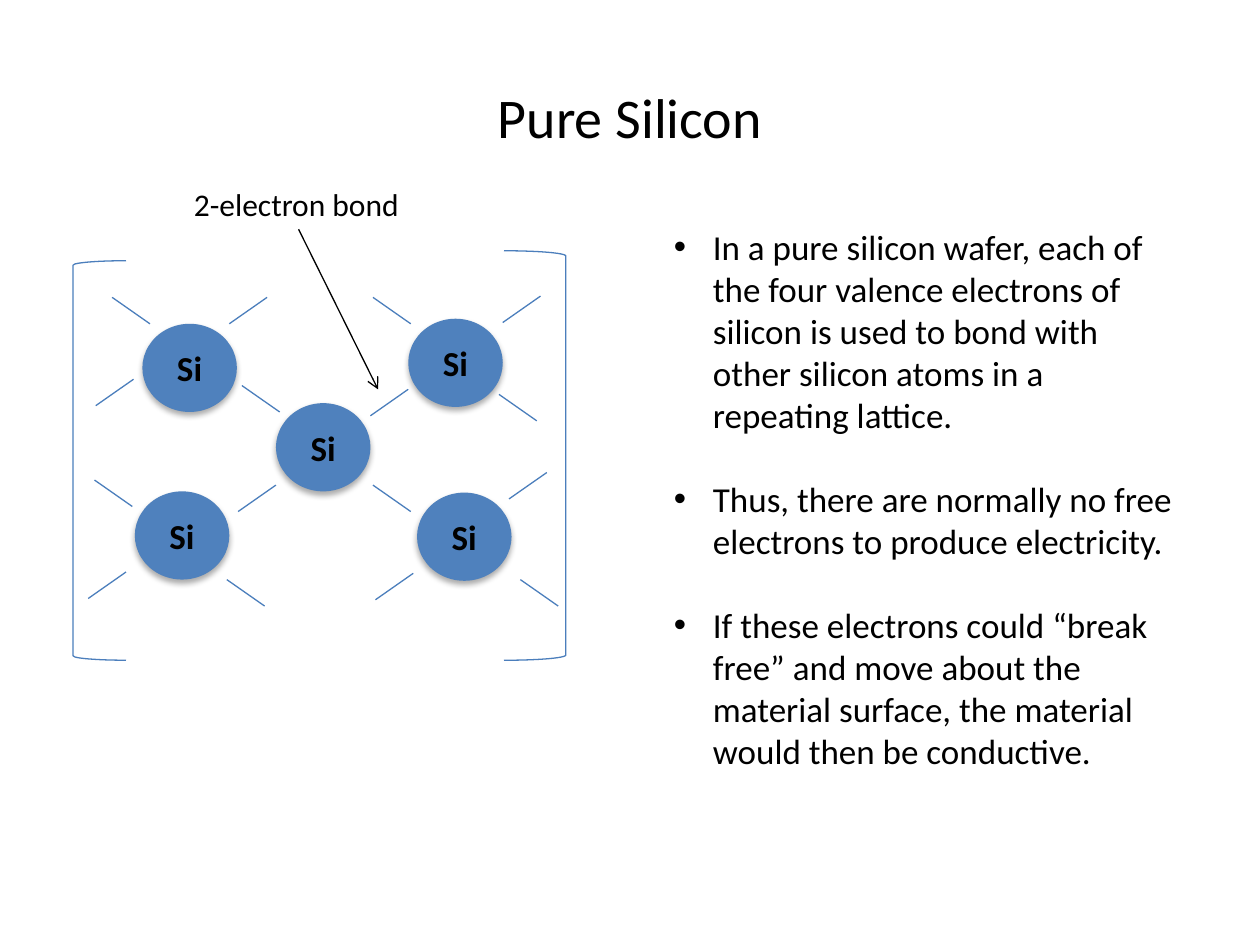
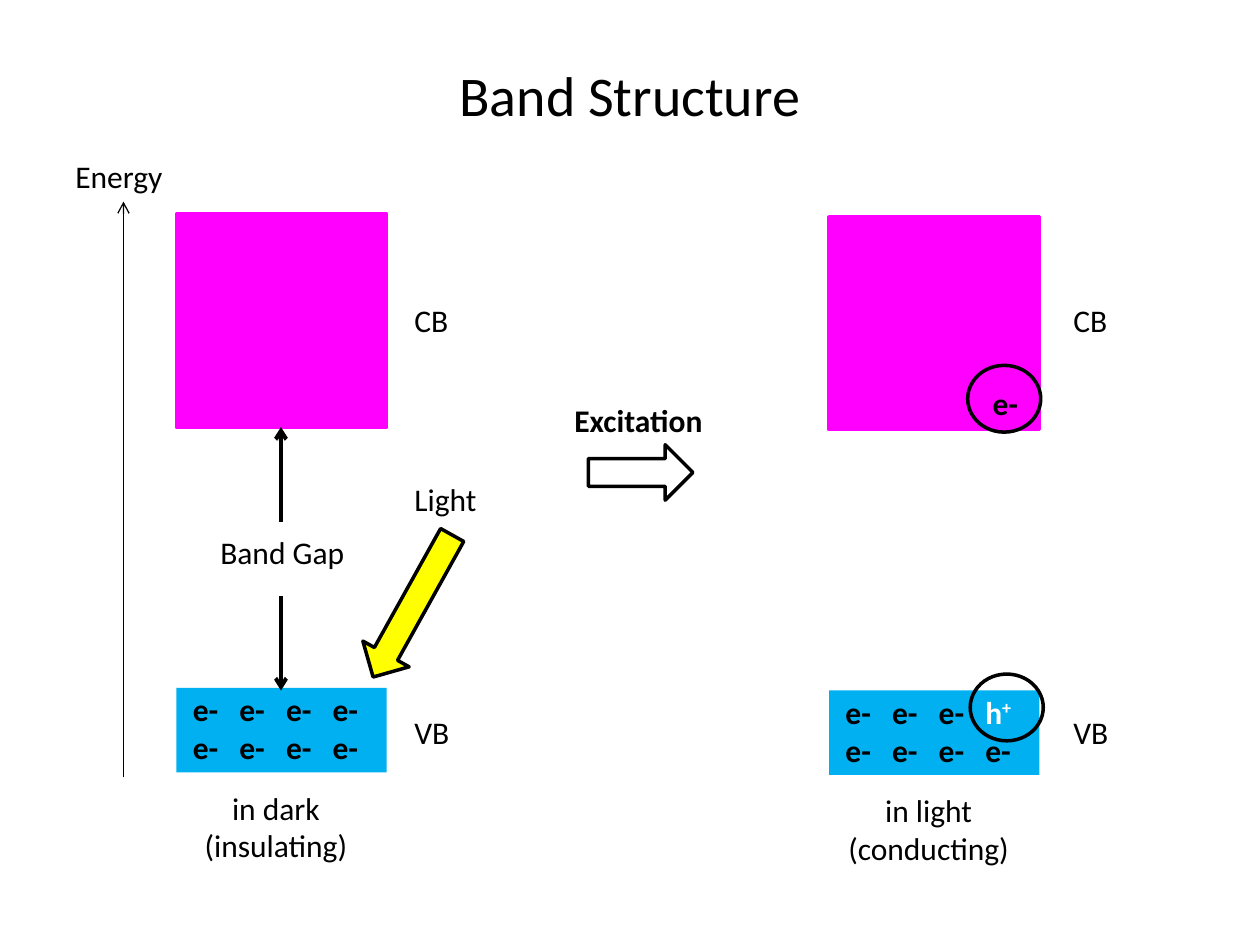
"""Build two slides on silicon bonding and semiconductor band structure."""
import pptx
import pptx.dml.color
import pptx.enum.shapes
import pptx.enum.text
import pptx.oxml
import pptx.oxml.ns
import pptx.util
from lxml import etree

Inches, Pt = pptx.util.Inches, pptx.util.Pt
MSO = pptx.enum.shapes.MSO_SHAPE
ALIGN = pptx.enum.text.PP_ALIGN
ANCHOR = pptx.enum.text.MSO_ANCHOR
qn = pptx.oxml.ns.qn

COLORS = {"black": "000000", "white": "FFFFFF", "atom": "4F81BD", "bond": "4B7EBC",
          "valence": "00B0F0", "conduction": "FF00FF", "light": "FFFF00"}
FONT = "Calibri"

ATOM_W, ATOM_H = 0.75, 0.7
ATOMS = [(2.19, 3.2), (3.24, 2.53), (3.31, 3.91), (1.13, 2.57), (1.07, 3.9)]
BOND_W, BOND_H = 0.3, 0.21
RISING_BONDS = [(2.94, 3.09), (1.89, 3.85), (0.76, 3.01), (1.82, 2.36), (3.99, 2.35),
                (0.7, 4.54), (2.98, 4.55), (4.04, 3.75)]
FALLING_BONDS = [(1.92, 3.06), (2.96, 3.85), (0.75, 3.81), (3.96, 3.13), (2.96, 2.36),
                 (0.89, 2.36), (1.8, 4.6), (4.13, 4.6)]
BRACKETS = [(MSO.LEFT_BRACKET, (0.58, 2.07, 0.42, 3.17)),
            (MSO.RIGHT_BRACKET, (4, 1.99, 0.49, 3.25))]
POINTS = [
    "In a pure silicon wafer, each of the four valence electrons of silicon is used "
    "to bond with other silicon atoms in a repeating lattice.",
    "Thus, there are normally no free electrons to produce electricity.",
    "If these electrons could “break free” and move about the material surface, "
    "the material would then be conductive.",
]

FULL_ROW = [("\t".join(["e-"] * 4), {})]
HOLE_ROW = [("e-\te-\te-\t", {}), ("h", {"color": "white"}),
            ("+", {"color": "white", "raised": True})]
BANDS = [
    {"left": 1.4, "drop": 0, "labels": 3.19, "rows": [FULL_ROW, FULL_ROW],
     "state": ["in dark", "(insulating)"]},
    {"left": 6.58, "drop": 0.02, "labels": 8.42, "rows": [HOLE_ROW, FULL_ROW],
     "state": ["in light", "(conducting)"]},
]
BAND_W = 1.67
ELECTRON_STEP = 0.37
BAND_LABELS = [("CB", 2.34), ("VB", 5.61)]
CAPTIONS = [("Energy", (0.5, 1.2, 0.96, 0.4), False),
            ("Band Gap", (1.65, 4.18, 1.25, 0.4), False),
            ("Light", (3.19, 3.76, 0.75, 0.4), False),
            ("Excitation", (4.46, 3.13, 1.25, 0.4), True),
            ("e-", (7.78, 3, 0.47, 0.4), True)]
ARROWS = [((0.98, 6.17), (0.98, 1.6), 0.75),
          ((2.23, 4.14), (2.23, 3.39), 2.25),
          ((2.23, 4.73), (2.23, 5.48), 2.25)]
RINGS = [(7.68, 2.9), (7.7, 5.35)]


def rgb(name):
    return pptx.dml.color.RGBColor.from_string(COLORS[name])


def add_run(p, text, size=18, bold=False, color="black", raised=False):
    r = p.add_run()
    r.text = text
    r.font.name, r.font.size, r.font.bold = FONT, Pt(size), bold
    r.font.color.rgb = rgb(color)
    if raised:
        r._r.get_or_add_rPr().set("baseline", "30000")


def add_text(slide, box, rows, align=ALIGN.LEFT, anchor=ANCHOR.TOP, **style):
    tf = slide.shapes.add_textbox(*map(Inches, box)).text_frame
    tf.word_wrap = True
    tf.vertical_anchor = anchor
    for i, row in enumerate(rows):
        p = tf.add_paragraph() if i else tf.paragraphs[0]
        p.alignment = align
        for text, extra in ([(row, {})] if isinstance(row, str) else row):
            add_run(p, text, **{**style, **extra})
    return tf


def add_shape(slide, kind, box, fill=None, line=None, width=2):
    sp = slide.shapes.add_shape(kind, *map(Inches, box))
    sp.shadow.inherit = False
    if fill:
        sp.fill.solid()
        sp.fill.fore_color.rgb = rgb(fill)
    else:
        sp.fill.background()
    if line:
        sp.line.color.rgb = rgb(line)
        sp.line.width = Pt(width)
    else:
        sp.line.fill.background()
    return sp


def add_line(slide, start, end, color="black", width=0.75, arrow=False):
    line = slide.shapes.add_connector(pptx.enum.shapes.MSO_CONNECTOR.STRAIGHT,
                                      *map(Inches, start + end))
    line.line.color.rgb = rgb(color)
    line.line.width = Pt(width)
    if arrow:
        etree.SubElement(line.line._get_or_add_ln(), qn("a:tailEnd"), type="arrow")
    etree.SubElement(line._element.spPr, qn("a:effectLst"))


def add_slide(prs, title, title_height):
    slide = prs.slides.add_slide(prs.slide_layouts[6])
    add_text(slide, (0.5, 0.3, 9, title_height), [title], ALIGN.CENTER, ANCHOR.MIDDLE, size=32)
    return slide


def add_atom(slide, x, y):
    sp = add_shape(slide, MSO.OVAL, (x, y, ATOM_W, ATOM_H), "atom")
    shadow = etree.SubElement(sp._element.spPr.find(qn("a:effectLst")), qn("a:outerShdw"),
                              blurRad=str(Pt(3.5)), dist=str(Pt(2.2)), dir="5400000",
                              rotWithShape="0")
    tint = etree.SubElement(shadow, qn("a:srgbClr"), val=COLORS["black"])
    etree.SubElement(tint, qn("a:alpha"), val="32000")
    tf = sp.text_frame
    tf.margin_left = tf.margin_right = 0
    tf.vertical_anchor = ANCHOR.MIDDLE
    p = tf.paragraphs[0]
    p.alignment = ALIGN.CENTER
    add_run(p, "Si", 20, True)


def add_bullets(tf):
    for i, p in enumerate(tf.paragraphs):
        p.space_before = Pt(24 if i else 0)
        pPr = p._p.get_or_add_pPr()
        pPr.set("marL", str(Inches(0.31)))
        pPr.set("indent", str(-Inches(0.31)))
        etree.SubElement(pPr, qn("a:buFont"), typeface="Arial")
        etree.SubElement(pPr, qn("a:buChar"), char="•")


def add_electrons(slide, band):
    tf = add_text(slide, (band["left"], 5.43 + band["drop"], 1.65, 0.71), band["rows"], bold=True)
    tf.margin_left, tf.margin_right = Inches(0.13), 0
    for p in tf.paragraphs:
        tabs = etree.SubElement(p._p.get_or_add_pPr(), qn("a:tabLst"))
        for n in range(1, 4):
            etree.SubElement(tabs, qn("a:tab"), pos=str(Inches(n * ELECTRON_STEP)), algn="l")


def build_silicon(prs):
    slide = add_slide(prs, "Pure Silicon", 1.25)
    for x, y in ATOMS:
        add_atom(slide, x, y)
    for x, y in RISING_BONDS:
        add_line(slide, (x, y + BOND_H), (x + BOND_W, y), "bond")
    for x, y in FALLING_BONDS:
        add_line(slide, (x, y), (x + BOND_W, y + BOND_H), "bond")
    for kind, box in BRACKETS:
        add_shape(slide, kind, box, line="bond", width=0.75)
    add_line(slide, (2.37, 1.82), (3, 3.09), arrow=True)
    add_text(slide, (1.44, 1.42, 1.98, 0.4), ["2-electron bond"])
    add_bullets(add_text(slide, (5.25, 1.74, 4.17, 4.48), POINTS, size=20))


def build_bands(prs):
    slide = add_slide(prs, "Band Structure", 0.9)
    for band in BANDS:
        left, drop = band["left"], band["drop"]
        add_shape(slide, MSO.RECTANGLE, (left, 5.46 + drop, BAND_W, 0.67), "valence")
        add_shape(slide, MSO.RECTANGLE, (left, 1.7 + drop, BAND_W, 1.69),
                  "conduction", "conduction")
        add_electrons(slide, band)
        add_text(slide, (left, 6.21 + drop, 1.58, 0.71), band["state"], ALIGN.CENTER)
        for label, top in BAND_LABELS:
            add_text(slide, (band["labels"], top, 0.58, 0.4), [label])
    for start, end, width in ARROWS:
        add_line(slide, start, end, width=width, arrow=True)
    light = add_shape(slide, MSO.LEFT_ARROW, (2.63, 4.6, 1.29, 0.42), "light", "black")
    light.rotation = 299.1
    add_shape(slide, MSO.RIGHT_ARROW, (4.67, 3.53, 0.83, 0.44), line="black")
    for caption, box, bold in CAPTIONS:
        add_text(slide, box, [caption], bold=bold)
    for x, y in RINGS:
        add_shape(slide, MSO.OVAL, (x, y, 0.58, 0.53), line="black")


def main():
    prs = pptx.Presentation()
    prs.slide_width, prs.slide_height = Inches(10), Inches(7.5)
    build_silicon(prs)
    build_bands(prs)
    prs.save("out.pptx")


if __name__ == "__main__":
    main()
